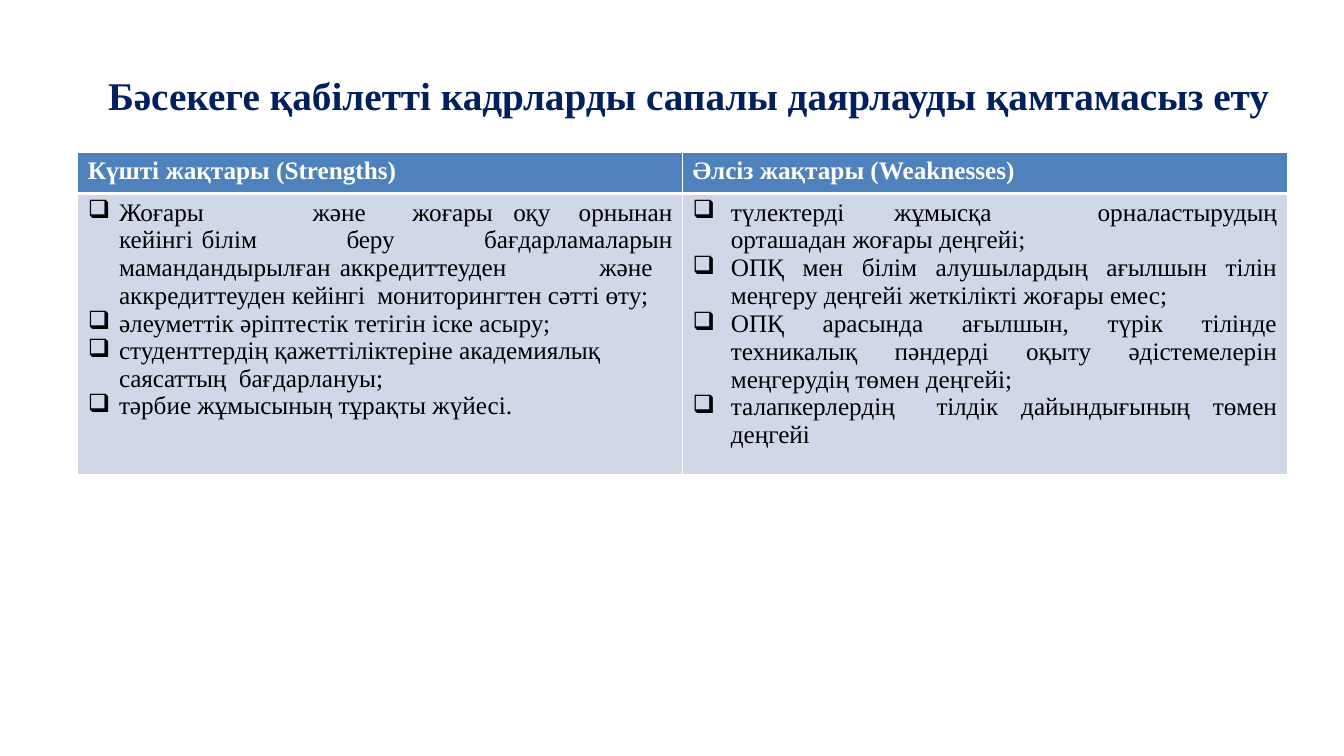
from dataclasses import dataclass

from lxml.etree import SubElement as Sub
from pptx import Presentation
from pptx.dml.color import RGBColor
from pptx.enum.text import MSO_ANCHOR as Anchor, MSO_AUTO_SIZE as Fit, PP_ALIGN as Align
from pptx.oxml.ns import qn
from pptx.util import Emu, Inches, Pt

WIDE, HIGH = Inches(13.33), Inches(7.5)
FACE = "Times New Roman"
WHITE, BLACK, NAVY = "FFFFFF", "000000", "002060"
BLUE, PALE = "4F81BD", "D0D8E8"
THIN, THICK = 1, 3
TIGHT = "-10"


@dataclass
class Item:
    runs: tuple[str, ...]
    tabs: tuple[float, ...] = ()
    just: bool = False
    line: float | None = None
    gap: float = 0


@dataclass
class Side:
    head: str
    dent: float
    items: list[Item]


SIDES = [
    Side("Күшті жақтары (Strengths)", 0.31, [
        Item(("Жоғары \tжәне\tжоғары\t", "оқу ", "орнынан кейінгі\tбілім ", "беру ",
              "бағдарламаларын мамандандырылған\tаккредиттеуден  және\tаккредиттеуден ",
              "кейінгі  ", "мониторингтен сәтті өту;"),
             (0.36, 0.36, 1.13, 2.01), just=True),
        Item(("әлеуметтік әріптестік тетігін іске асыру;",), (0.39,), line=0.98, gap=0.1),
        Item(("студенттердің қажеттіліктеріне академиялық\t", "саясаттың  ", "бағдарлануы;"),
             (0.39, 2.06), line=0.98, gap=0.2),
        Item(("тәрбие жұмысының тұрақты жүйесі.",), (0.39, 2.06), line=0.98, gap=0.2),
    ]),
    Side("Әлсіз жақтары (Weaknesses)", 0.38, [
        Item(("түлектерді\tжұмысқа орналастырудың орташадан жоғары деңгейі;",), just=True),
        Item(("ОПҚ мен білім алушылардың ағылшын тілін меңгеру деңгейі жеткілікті жоғары емес;",),
             (0.3,), just=True),
        Item(("ОПҚ арасында ағылшын, түрік тілінде техникалық пәндерді оқыту "
              "әдістемелерін меңгерудің төмен деңгейі;",), (0.3,), just=True),
        Item(("талапкерлердің\t", "тілдік ", "дайындығының төмен деңгейі"),
             (0.3, 2.42), just=True, line=0.98, gap=0.1),
    ]),
]


def across(share: float) -> Emu:
    return Emu(round(WIDE * share / 100))


def down(share: float) -> Emu:
    return Emu(round(HIGH * share / 100))


def paint(color, code: str) -> None:
    color.rgb = RGBColor.from_string(code)


def write(para, text: str, size: float = 18, code: str = BLACK, bold: bool = False):
    run = para.add_run()
    run.text = text
    font = run.font
    font.name, font.size, font.bold = FACE, Pt(size), bold
    paint(font.color, code)
    return run


def fill(cell, code: str, top: int, base: int) -> None:
    props = cell._tc.get_or_add_tcPr()
    for edge, width in (("L", THIN), ("R", THIN), ("T", top), ("B", base)):
        line = Sub(props, qn(f"a:ln{edge}"), w=str(Pt(width)))
        Sub(Sub(line, qn("a:solidFill")), qn("a:srgbClr"), val=WHITE)
    cell.fill.solid()
    paint(cell.fill.fore_color, code)


def bullet(para, item: Item, dent: float) -> None:
    if item.just:
        para.alignment = Align.JUSTIFY
    if item.line:
        para.line_spacing = item.line
    para.space_before = Pt(item.gap)
    props = para._p.get_or_add_pPr()
    props.set("marL", str(Inches(dent)))
    props.set("indent", str(Inches(-dent)))
    Sub(props, qn("a:buChar"), char="❑")
    if item.tabs:
        stops = Sub(props, qn("a:tabLst"))
        for tab in item.tabs:
            Sub(stops, qn("a:tab"), pos=str(Inches(tab)), algn="l")
    for spot, text in enumerate(item.runs):
        run = write(para, text)
        if spot % 2:
            run._r.get_or_add_rPr().set("spc", TIGHT)


def grid(slide) -> None:
    frame = slide.shapes.add_table(2, len(SIDES), across(5.78), down(20.13), across(90), down(42.53))
    table = frame.table
    for row in table.rows:
        row.height = down(5.47)
    frame.height = down(42.53)
    for col, side in enumerate(SIDES):
        head, body = table.cell(0, col), table.cell(1, col)
        fill(head, BLUE, THIN, THICK)
        write(head.text_frame.paragraphs[0], side.head, code=WHITE, bold=True)
        fill(body, PALE, THICK, THIN)
        frame = body.text_frame
        for spot, item in enumerate(side.items):
            para = frame.add_paragraph() if spot else frame.paragraphs[0]
            bullet(para, item, side.dent)


def title(slide, text: str) -> None:
    box = slide.shapes.title
    box.left, box.top = across(6.15), down(8.8)
    box.width, box.height = across(89.65), down(7.6)
    frame = box.text_frame
    frame.word_wrap = True
    frame.auto_size = Fit.SHAPE_TO_FIT_TEXT
    frame.vertical_anchor = Anchor.MIDDLE
    para = frame.paragraphs[0]
    para.alignment = Align.CENTER
    para._p.get_or_add_pPr().set("marL", str(Inches(0.07)))
    write(para, text, size=28, code=NAVY, bold=True)


def main() -> None:
    deck = Presentation()
    deck.slide_width, deck.slide_height = WIDE, HIGH
    slide = deck.slides.add_slide(deck.slide_layouts[5])
    grid(slide)
    title(slide, "Бәсекеге қабілетті кадрларды сапалы даярлауды қамтамасыз ету")
    deck.save("out.pptx")


if __name__ == "__main__":
    main()
